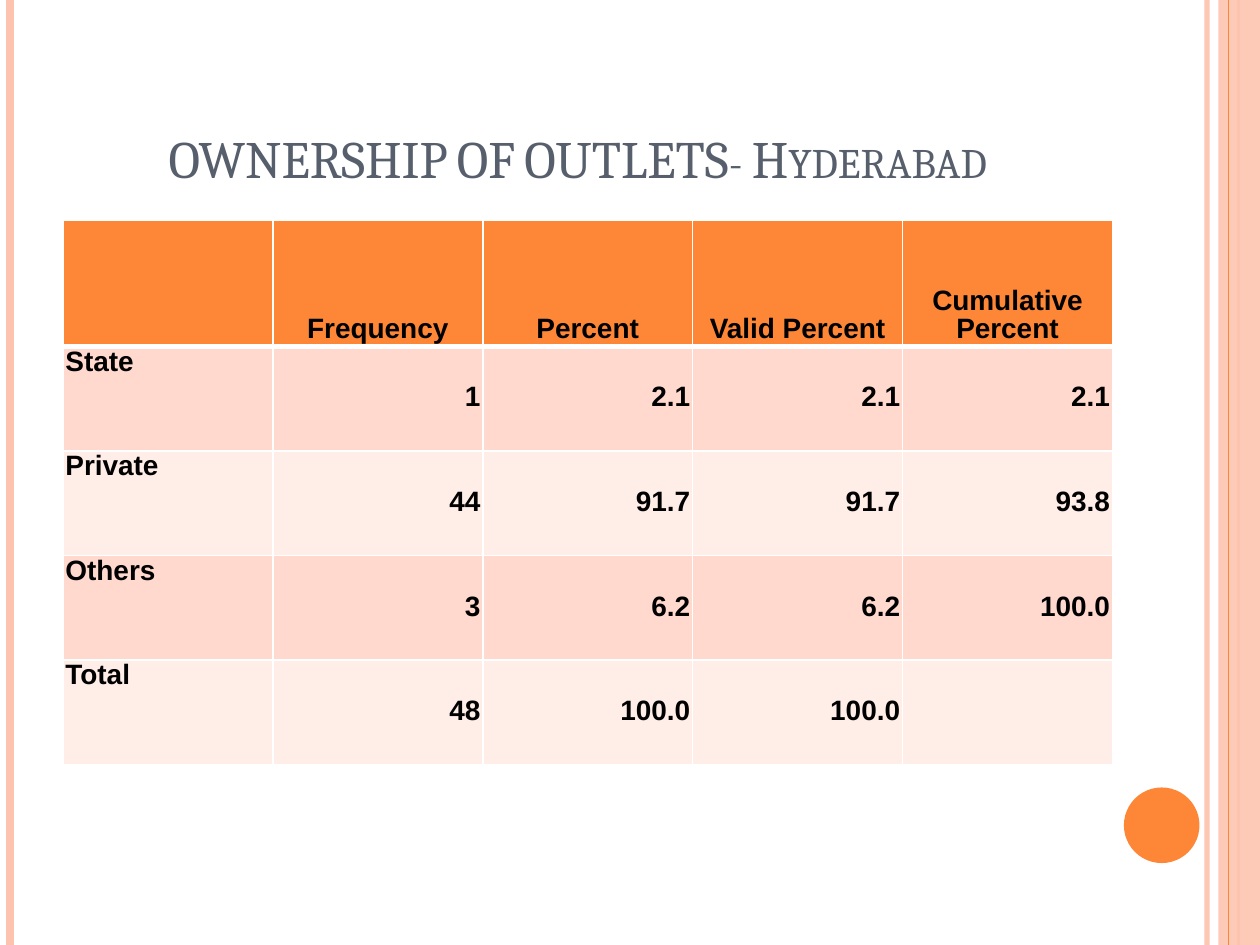
from lxml.etree import SubElement
from pptx import Presentation
from pptx.dml.color import RGBColor
from pptx.enum.shapes import MSO_CONNECTOR, MSO_SHAPE
from pptx.enum.text import MSO_ANCHOR, PP_ALIGN
from pptx.oxml.ns import qn
from pptx.util import Inches, Pt

ORANGE = RGBColor(0xFE, 0x86, 0x37)
PEACH = RGBColor(0xFE, 0xC3, 0xAE)
BAND = RGBColor(0xFF, 0xD9, 0xCE)
PALE = RGBColor(0xFF, 0xED, 0xE8)
SLATE = RGBColor(0x57, 0x5F, 0x6D)
BLACK = RGBColor(0, 0, 0)
WHITE = RGBColor(0xFF, 0xFF, 0xFF)

ROWS = [
    ["", "Frequency", "Percent", "Valid Percent", "Cumulative Percent"],
    ["State", "1", "2.1", "2.1", "2.1"],
    ["Private", "44", "91.7", "91.7", "93.8"],
    ["Others", "3", "6.2", "6.2", "100.0"],
    ["Total", "48", "100.0", "100.0", ""],
]


def put_text(frame, text, font="Arial", size=16, color=BLACK, bold=False,
             align=PP_ALIGN.LEFT, space=None, small=False):
    para = frame.paragraphs[0]
    para.alignment = align
    if space:
        para.line_spacing = Pt(space)
    run = para.add_run()
    run.text = text
    run.font.name = font
    run.font.size = Pt(size)
    run.font.bold = bold
    run.font.color.rgb = color
    if small:
        run._r.get_or_add_rPr().set("cap", "small")


def set_alpha(part, alpha):
    tint = next(part.iter(qn("a:srgbClr")))
    SubElement(tint, qn("a:alpha"), val=str(alpha * 1000))


def add_rule(slide, x, color, width, alpha=None):
    rule = slide.shapes.add_connector(
        MSO_CONNECTOR.STRAIGHT, Inches(x), 0, Inches(x), Inches(7.5))
    rule.line.color.rgb = color
    rule.line.width = Pt(width)
    if alpha:
        set_alpha(rule.line._get_or_add_ln(), alpha)
    SubElement(rule._element.spPr, qn("a:effectLst"))


def add_block(slide, kind, x, y, wide, high, color, alpha=None):
    block = slide.shapes.add_shape(
        kind, Inches(x), Inches(y), Inches(wide), Inches(high))
    block.shadow.inherit = False
    block.fill.solid()
    block.fill.fore_color.rgb = color
    block.line.fill.background()
    if alpha:
        set_alpha(block._element.spPr, alpha)


def add_title(slide, text):
    box = slide.shapes.add_textbox(
        Inches(0.5), Inches(0.3), Inches(8.17), Inches(1.25))
    frame = box.text_frame
    frame.word_wrap = True
    frame.vertical_anchor = MSO_ANCHOR.BOTTOM
    put_text(frame, text, font="Cambria", size=30, color=SLATE,
             align=PP_ALIGN.CENTER, small=True)


def set_edges(cell, top=1, base=1):
    props = cell._tc.get_or_add_tcPr()
    for side, width in zip("LRTB", (1, 1, top, base)):
        edge = SubElement(props, qn(f"a:ln{side}"), w=str(Pt(width)))
        fill = SubElement(edge, qn("a:solidFill"))
        SubElement(fill, qn("a:srgbClr"), val=str(WHITE))


def fill_cell(cell, text, row, col):
    # The header rule is thicker than the other borders
    set_edges(cell, top=3 if row == 1 else 1, base=3 if row == 0 else 1)
    cell.fill.solid()
    cell.fill.fore_color.rgb = ORANGE if row == 0 else BAND if row % 2 else PALE
    if not text:
        return
    cell.margin_left = cell.margin_right = Inches(0.02)
    cell.margin_top = cell.margin_bottom = Inches(0.02)
    if row == 0:
        anchor, align = MSO_ANCHOR.BOTTOM, PP_ALIGN.CENTER
    elif col == 0:
        anchor, align = MSO_ANCHOR.TOP, PP_ALIGN.LEFT
    else:
        anchor, align = MSO_ANCHOR.MIDDLE, PP_ALIGN.RIGHT
    cell.vertical_anchor = anchor
    put_text(cell.text_frame, text, bold=True, align=align, space=16)


def add_grid(slide, rows):
    table = slide.shapes.add_table(
        len(rows), len(rows[0]), Inches(0.5), Inches(1.75),
        Inches(8.33), Inches(4.33)).table
    for col in table.columns:
        col.width = Inches(8.33 / len(rows[0]))
    for row, line in enumerate(rows):
        table.rows[row].height = Inches(0.83 if row else 1)
        for col, text in enumerate(line):
            fill_cell(table.cell(row, col), text, row, col)


def main():
    deck = Presentation()
    deck.slide_width, deck.slide_height = Inches(10), Inches(7.5)
    slide = deck.slides.add_slide(deck.slide_layouts[6])

    # Side stripes and dot
    add_rule(slide, 9.58, PEACH, 3, alpha=93)
    add_rule(slide, 0.08, PEACH, 4.5)
    add_rule(slide, 9.83, PEACH, 1.5)
    add_block(slide, MSO_SHAPE.RECTANGLE, 9.67, 0, 0.33, 7.5, PEACH, alpha=87)
    add_rule(slide, 9.75, ORANGE, 0.75)
    add_block(slide, MSO_SHAPE.OVAL, 8.92, 6.25, 0.6, 0.6, ORANGE)

    # Title and table
    add_title(slide, "OWNERSHIP OF OUTLETS- Hyderabad")
    add_grid(slide, ROWS)

    deck.save("out.pptx")


if __name__ == "__main__":
    main()
